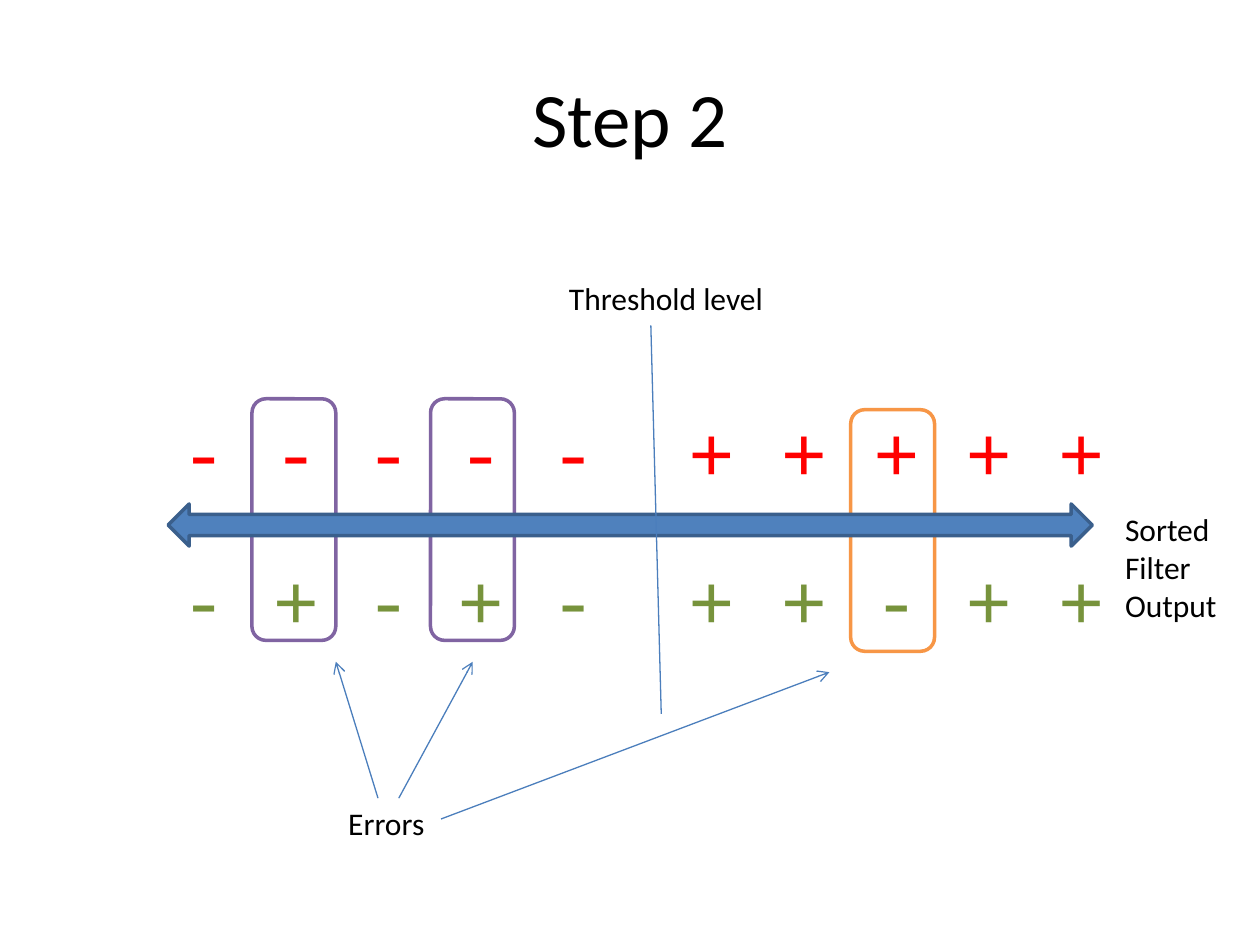
from lxml import etree
from pptx import Presentation
from pptx import util as u
from pptx.dml.color import RGBColor
from pptx.enum import shapes, text
from pptx.oxml.ns import qn

COLOURS = {
    "text": "000000", "paper": "FFFFFF", "predicted": "FF0000", "actual": "77933C",
    "false_negative": "8064A2", "false_positive": "F79646",
    "axis": "4F81BD", "axis_edge": "3A5F8C", "line": "4B7EBC",
}
BOX_WIDTH, BOX_HEIGHT = 1.69, 4.87
HALF_GAP = 10.24  # tab stop where the positive half of a row starts


def colour(name):
    return RGBColor.from_string(COLOURS[name])


def place(shape, left, top, width, height):
    shape.left, shape.top = u.Cm(left), u.Cm(top)
    shape.width, shape.height = u.Cm(width), u.Cm(height)


def write(shape, words, size=18, font="Calibri", ink="text", align=None, tab=None):
    """Fill a shape with one formatted paragraph, with an optional tab stop in cm."""
    shape.text_frame.word_wrap = True
    para = shape.text_frame.paragraphs[0]
    if tab:
        stops = etree.SubElement(para._p.get_or_add_pPr(), qn("a:tabLst"))
        etree.SubElement(stops, qn("a:tab"), pos=str(u.Cm(tab)), algn="l")
    if align is not None:
        para.alignment = align
    span = para.add_run()
    span.text = words
    span.font.size, span.font.name = u.Pt(size), font
    span.font.color.rgb = colour(ink)


def add_text(page, words, left, top, width, height, **style):
    box = page.shapes.add_textbox(*map(u.Cm, (left, top, width, height)))
    write(box, words, **style)


def add_block(page, kind, left, top, width, height, fill, edge):
    block = page.shapes.add_shape(kind, *map(u.Cm, (left, top, width, height)))
    block.shadow.inherit = False
    block.fill.solid()
    block.fill.fore_color.rgb = colour(fill)
    block.line.color.rgb = colour(edge)
    block.line.width = u.Pt(2)


def add_line(page, start, end, arrow=False):
    line = page.shapes.add_connector(
        shapes.MSO_CONNECTOR.STRAIGHT, *map(u.Cm, (*start, *end)))
    line.line.color.rgb = colour("line")
    line.line.width = u.Pt(0.75)
    if arrow:
        etree.SubElement(line.line._get_or_add_ln(), qn("a:tailEnd"), type="arrow")
    etree.SubElement(line._element.spPr, qn("a:effectLst"))


def main():
    deck = Presentation()
    deck.slide_width, deck.slide_height = u.Cm(25.4), u.Cm(19.05)
    page = deck.slides.add_slide(deck.slide_layouts[5])

    title = page.shapes.title
    place(title, 1.27, 0.76, 22.86, 3.18)
    write(title, "Step 2", size=44, align=text.PP_ALIGN.CENTER)

    for left, top, edge in ((17.15, 8.26, "false_positive"),
                            (8.68, 8.04, "false_negative"),
                            (5.08, 8.04, "false_negative")):
        add_block(page, shapes.MSO_SHAPE.ROUNDED_RECTANGLE, left, top,
                  BOX_WIDTH, BOX_HEIGHT, "paper", edge)
    add_block(page, shapes.MSO_SHAPE.LEFT_RIGHT_ARROW, 3.39, 10.16, 18.63, 0.85,
              "axis", "axis_edge")

    add_line(page, (13.12, 6.56), (13.33, 14.39))
    add_text(page, "Threshold level", 11.22, 5.5, 5.72, 1.03)

    for signs, top, ink in (("- - - - -\t+ + + + +", 8.04, "predicted"),
                            ("- + - + -\t+ + - + +", 11.01, "actual")):
        add_text(page, signs, 3.39, top, 19.26, 2.14, size=44,
                 font="Courier New", ink=ink, tab=HALF_GAP)

    add_text(page, "Sorted Filter Output", 22.43, 10.16, 2.97, 2.57)
    add_text(page, "Errors", 6.77, 16.09, 6.56, 1.06)
    for start, end in (((7.62, 16.09), (6.77, 13.34)),
                       ((8.04, 16.09), (9.53, 13.34)),
                       ((8.89, 16.51), (16.72, 13.55))):
        add_line(page, start, end, arrow=True)

    deck.save("out.pptx")


if __name__ == "__main__":
    main()
